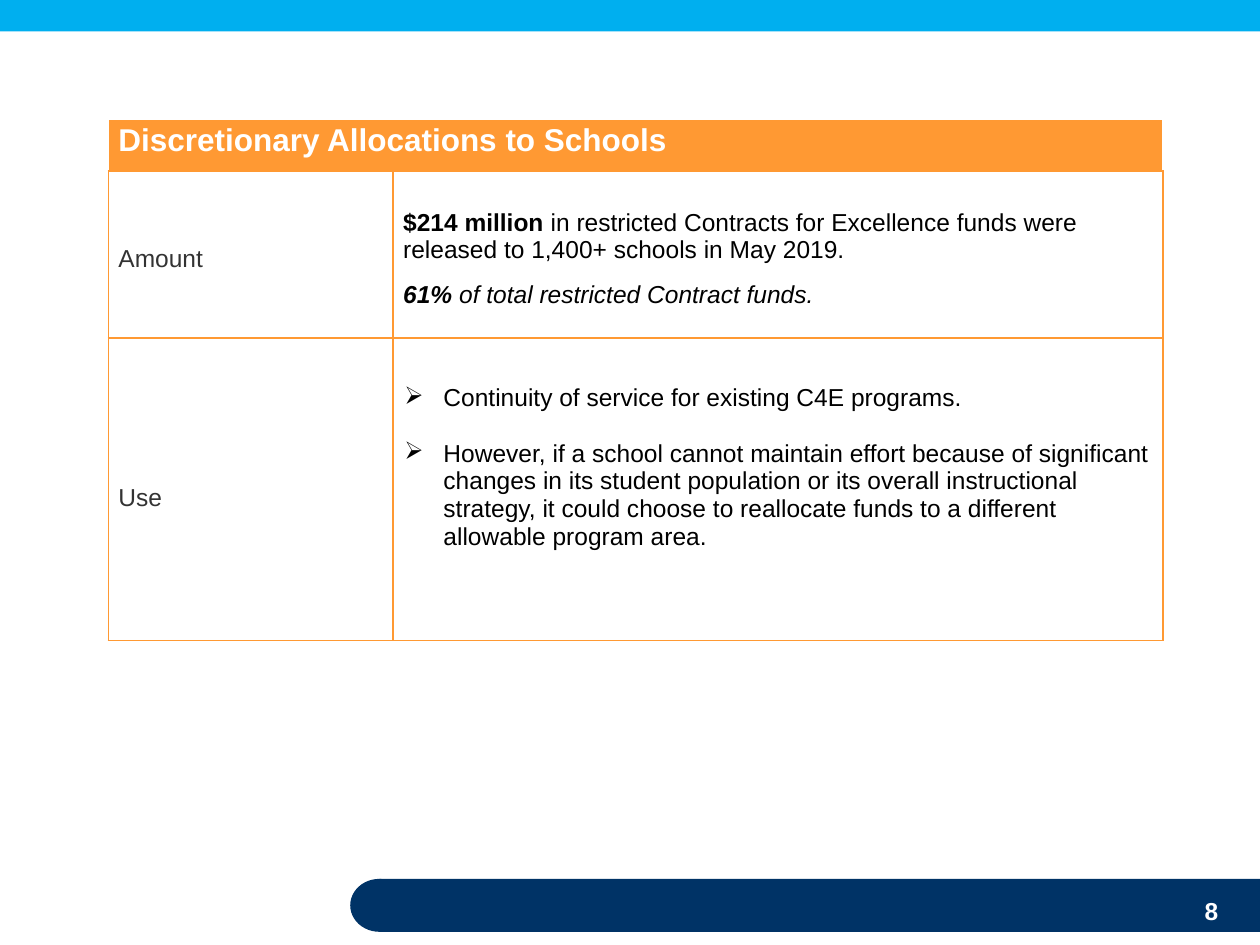
import pptx
import pptx.util
import pptx.dml.color
import pptx.enum.shapes
import pptx.oxml
import pptx.oxml.ns

HUES = {"navy": "003366", "sky": "00AFEF", "orange": "FF9933",
        "white": "FFFFFF", "gray": "333333", "black": "000000"}
WIDE, HIGH = pptx.util.Inches(10), pptx.util.Inches(7.5)
KIND = pptx.enum.shapes.MSO_SHAPE
BASE = {"name": "Arial", "size": pptx.util.Pt(14), "bold": False}
BOLD = {"bold": True}
TILT = {"italic": True}
PAD = 0.08


def rgb(hue):
    return pptx.dml.color.RGBColor.from_string(HUES[hue])


def area(x, y, w, h):
    return [round(n) for n in (x * WIDE, y * HIGH, w * WIDE, h * HIGH)]


def node(root, tag, **vals):
    item = pptx.oxml.parse_xml(f"<a:{tag} {pptx.oxml.ns.nsdecls('a')}/>")
    for key, val in vals.items():
        item.set(key, str(val))
    root.append(item)
    return item


def block(slide, kind, box, hue):
    shape = slide.shapes.add_shape(kind, *box)
    shape.shadow.inherit = False
    shape.fill.solid()
    shape.fill.fore_color.rgb = rgb(hue)
    shape.line.fill.background()


def write(frame, paras, hue, pad=PAD, mark=None, gap=0, **extra):
    for i, runs in enumerate(paras):
        para = frame.paragraphs[0] if i == 0 else frame.add_paragraph()
        props = para._p.get_or_add_pPr()
        left, hang = (0.4, -0.31) if mark else (pad, 0)
        props.set("marL", str(pptx.util.Inches(left)))
        props.set("indent", str(pptx.util.Inches(hang)))
        if mark:
            node(props, "buChar", char=mark)
        if i:
            para.space_before = pptx.util.Pt(gap)
        for text, style in runs:
            run = para.add_run()
            run.text = text
            for key, val in {**BASE, **extra, **style}.items():
                setattr(run.font, key, val)
            run.font.color.rgb = rgb(hue)


def edge(cell):
    props = cell._tc.get_or_add_tcPr()
    for side in "LRTB":
        line = node(props, f"ln{side}", w=pptx.util.Pt(1))
        fill = node(line, "solidFill")
        node(fill, "srgbClr", val=HUES["orange"])


def inset(part, top=0):
    sides = {"margin_left": 0, "margin_right": 0, "margin_bottom": 0,
             "margin_top": pptx.util.Inches(top)}
    for key, val in sides.items():
        setattr(part, key, val)


def grid(slide, box):
    table = slide.shapes.add_table(3, 2, *box).table
    table.first_row = table.horz_banding = False
    for col, share in zip(table.columns, (0.27, 0.73)):
        col.width = round(box[2] * share)
    for row, share in zip(table.rows, (0.1, 0.32, 0.58)):
        row.height = round(box[3] * share)

    head = table.cell(0, 0)
    head.merge(table.cell(0, 1))
    inset(head, 0.03)
    head.fill.solid()
    head.fill.fore_color.rgb = rgb("orange")
    write(head.text_frame, [[("Discretionary Allocations to Schools", BOLD)]],
          "white", size=pptx.util.Pt(18))

    funds = [
        [("$214 million ", BOLD),
         ("in restricted Contracts for Excellence funds were "
          "released to 1,400+ schools in May 2019.", {})],
        [("61% ", {**BOLD, **TILT}),
         ("of total restricted Contract funds.", TILT)]]
    uses = [
        [("Continuity of service for existing C4E programs.", {})],
        [("However, if a school cannot maintain effort because of significant "
          "changes in its student population or its overall instructional "
          "strategy, it could choose to reallocate funds to a different "
          "allowable program area.", {})]]
    body = [
        (1, 0, 0.59, [[("Amount", {})]], "gray", {}),
        (1, 1, 0.3, funds, "black", {"gap": 10}),
        (2, 0, 1.16, [[("Use", {})]], "gray", {}),
        (2, 1, 0.37, uses, "black", {"gap": 16, "mark": "➢"})]
    for row, col, top, paras, hue, style in body:
        cell = table.cell(row, col)
        inset(cell, top)
        edge(cell)
        cell.fill.background()
        write(cell.text_frame, paras, hue, **style)


def foot(slide, box):
    left, top, wide, high = box
    cap = round(wide * 0.064)
    block(slide, KIND.RECTANGLE,
          (left + cap // 2, top, wide - cap // 2, high), "navy")
    block(slide, KIND.OVAL, (left, top, cap, high), "navy")
    page = slide.shapes.add_textbox(
        left + round(wide * 0.935), top + high // 3,
        round(wide * 0.037), round(high * 0.6))
    frame = page.text_frame
    frame.word_wrap = True
    inset(frame)
    write(frame, [[("8", BOLD)]], "white", pad=0.03)
    frame.paragraphs[0].line_spacing = pptx.util.Pt(16.5)


def main():
    deck = pptx.Presentation()
    deck.slide_width, deck.slide_height = WIDE, HIGH
    slide = deck.slides.add_slide(deck.slide_layouts[6])
    block(slide, KIND.RECTANGLE, area(0, 0, 1, 1 / 30), "sky")
    foot(slide, area(0.278, 0.93, 0.722, 0.056))
    grid(slide, area(0.086, 0.126, 0.837, 0.552))
    deck.save("out.pptx")


if __name__ == "__main__":
    main()
